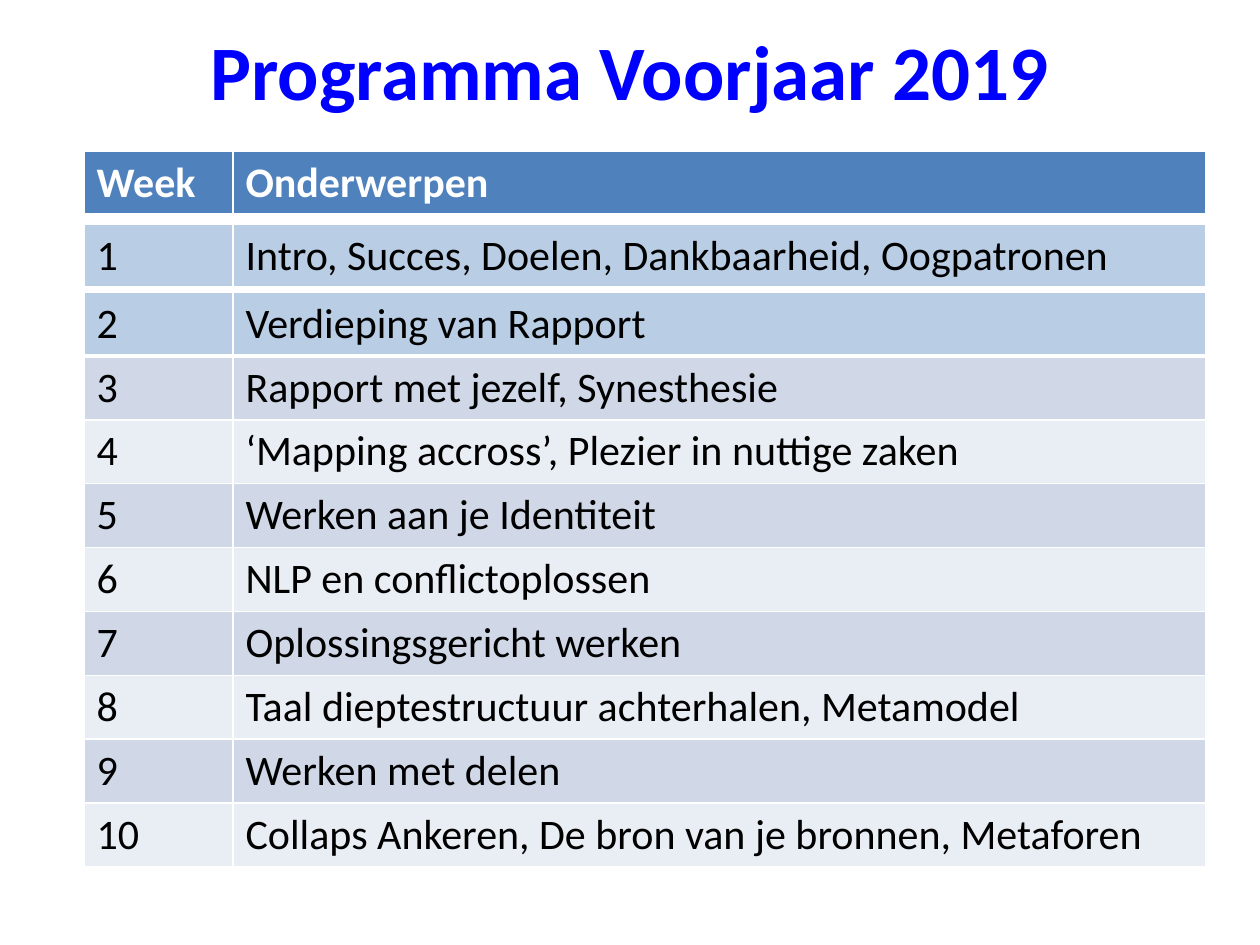
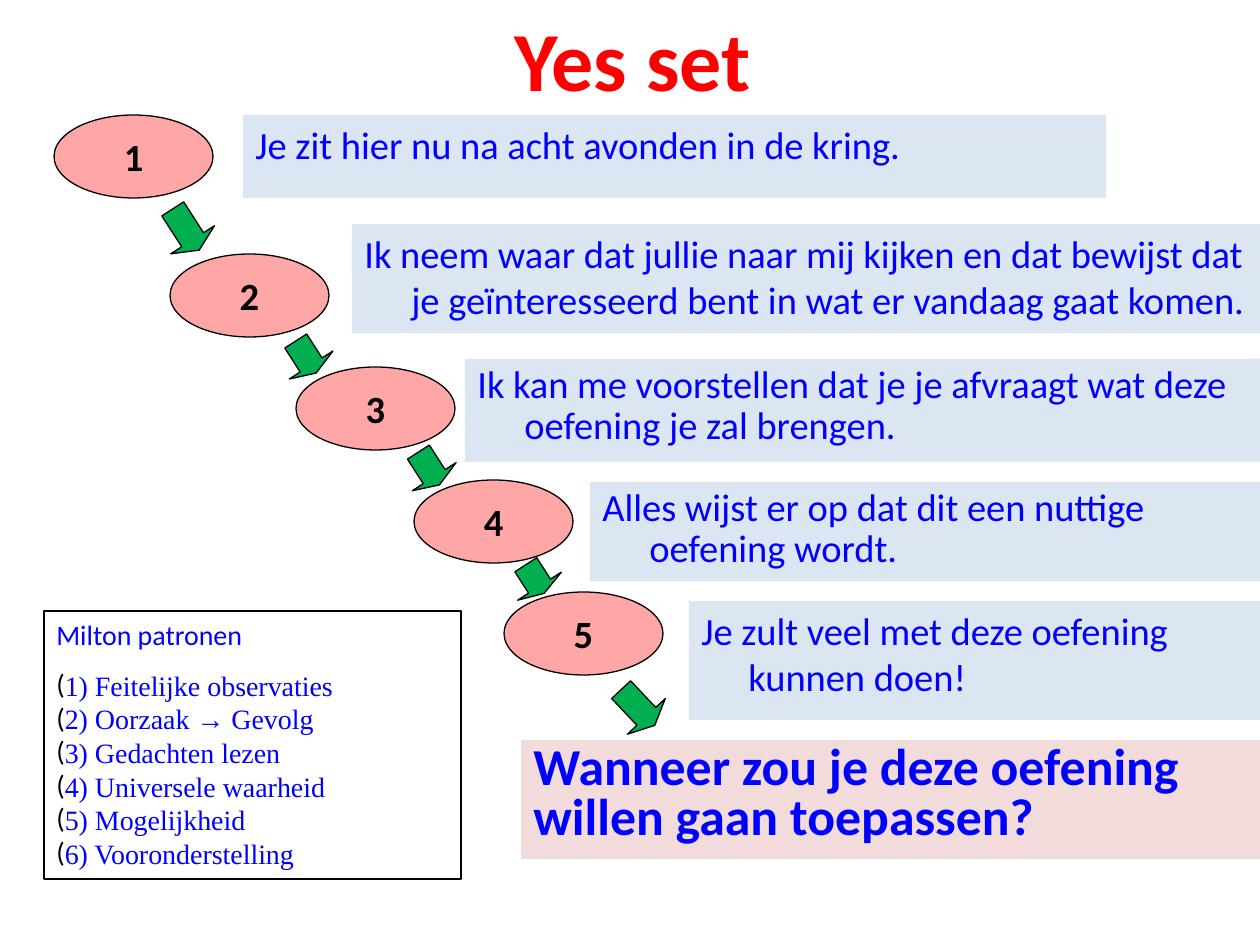
import pptx
import pptx.dml.color
import pptx.enum.shapes
import pptx.enum.text
import pptx.oxml
import pptx.oxml.ns
import pptx.util
import lxml.etree

KINDS = pptx.enum.shapes.MSO_SHAPE
ALIGN = pptx.enum.text.PP_ALIGN
ANCHOR = pptx.enum.text.MSO_ANCHOR
PT = pptx.util.Pt
PX = 914400 / 126  # EMU in one px
FONT = "Calibri"
BLUE, RED, BLACK, WHITE = "0000FF", "FF0000", "000000", "FFFFFF"
HEAD, FIRST, ODD, EVEN = "4F81BD", "B9CDE5", "D0D8E8", "E9EDF4"
PINK, GREEN, PALE, ROSE = "FFA7A7", "00B050", "DCE6F2", "F2DCDB"


def style(frame, size, color, bold=False, align=ALIGN.LEFT, anchor=ANCHOR.TOP):
    """Give all text in the frame one look."""
    frame.vertical_anchor = anchor
    for para in frame.paragraphs:
        para.alignment = align
        for run in para.runs:
            run.font.name = FONT
            run.font.size = PT(size)
            run.font.bold = bold
            run.font.color.rgb = pptx.dml.color.RGBColor.from_string(color)


def draw(slide, kind, box, fill, line=None):
    """Add a flat shape; box is left, top, width, height in px."""
    shape = slide.shapes.add_shape(kind, *[round(n * PX) for n in box])
    shape.shadow.inherit = False
    shape.fill.solid()
    shape.fill.fore_color.rgb = pptx.dml.color.RGBColor.from_string(fill)
    if line:
        shape.line.color.rgb = pptx.dml.color.RGBColor.from_string(line)
        shape.line.width = PT(0.75)
    else:
        shape.line.fill.background()
    shape.text_frame.word_wrap = True
    return shape


prs = pptx.Presentation()
prs.slide_width = round(1260 * PX)
prs.slide_height = round(945 * PX)

# Titles
slides = []
for text, box, size, color in [
    ("Programma Voorjaar 2019", (63, 6, 1134, 127), 44, BLUE),
    ("Yes set", (501, 0, 263, 115), 48, RED),
]:
    slide = prs.slides.add_slide(prs.slide_layouts[5])
    title = slide.shapes.title
    title.left, title.top, title.width, title.height = [round(n * PX) for n in box]
    title.text_frame.text = text
    title.text_frame.auto_size = pptx.enum.text.MSO_AUTO_SIZE.NONE
    style(title.text_frame, size, color, True, ALIGN.CENTER, ANCHOR.MIDDLE)
    slides.append(slide)
plan, steps = slides

# Programme: three stacked tables that share their columns
topics = [
    "Verdieping van Rapport",
    "Rapport met jezelf, Synesthesie",
    "‘Mapping accross’, Plezier in nuttige zaken",
    "Werken aan je Identiteit",
    "NLP en conflictoplossen",
    "Oplossingsgericht werken",
    "Taal dieptestructuur achterhalen, Metamodel",
    "Werken met delen",
    "Collaps Ankeren, De bron van je bronnen, Metaforen",
]
weeks = [(str(num), topic) for num, topic in enumerate(topics, 2)]
intro = "Intro, Succes, Doelen, Dankbaarheid, Oogpatronen"
for top, rows, fills in [
    (151, [("Week", "Onderwerpen")], [HEAD]),
    (224, [("1", intro)], [FIRST]),
    (292, weeks, [FIRST] + [ODD, EVEN] * 4),
]:
    box = (84, top, 1122, 63 * len(rows))
    frame = plan.shapes.add_table(len(rows), 2, *[round(n * PX) for n in box])
    table = frame.table
    for col, width in zip(table.columns, (149, 973)):
        col.width = round(width * PX)
    for i, (row, fill) in enumerate(zip(rows, fills)):
        for j, text in enumerate(row):
            cell = table.cell(i, j)
            cell.text = text
            head = fill == HEAD
            style(cell.text_frame, 24, WHITE if head else BLACK, head)
            props = cell._tc.get_or_add_tcPr()
            for side in ("lnL", "lnR", "lnT", "lnB"):
                thick = side == "lnB" and i == 0 or side == "lnT" and i == 1
                edge = lxml.etree.SubElement(
                    props, pptx.oxml.ns.qn("a:" + side), w=str(PT(3 if thick else 1))
                )
                paint = lxml.etree.SubElement(edge, pptx.oxml.ns.qn("a:solidFill"))
                lxml.etree.SubElement(paint, pptx.oxml.ns.qn("a:srgbClr"), val=WHITE)
            cell.fill.solid()
            cell.fill.fore_color.rgb = pptx.dml.color.RGBColor.from_string(fill)

# Staircase of numbered steps, each with its sentence
stairs = [
    ((54, 115), (243, 115, 863, 83), 1, "Je zit hier nu na acht avonden in de kring."),
    ((170, 254), (352, 224, 908, 109), 1,
     "Ik neem waar dat jullie naar mij kijken en dat bewijst dat "
     "je geïnteresseerd bent in wat er vandaag gaat komen."),
    ((296, 367), (465, 359, 795, 103), 0.9,
     "Ik kan me voorstellen dat je je afvraagt wat deze oefening je zal brengen."),
    ((414, 480), (590, 482, 670, 99), 0.9,
     "Alles wijst er op dat dit een nuttige oefening wordt."),
    ((504, 592), (689, 601, 571, 119), 1,
     "Je zult veel met deze oefening kunnen doen!"),
]
for num, (spot, box, space, text) in enumerate(stairs, 1):
    band = draw(steps, KINDS.RECTANGLE, box, PALE)
    band.text_frame.text = text
    style(band.text_frame, 22, BLUE)
    para = band.text_frame.paragraphs[0]
    para.line_spacing = space
    props = para._p.get_or_add_pPr()
    props.set("marL", str(round(47 * PX)))
    props.set("indent", str(round(-47 * PX)))
    disc = draw(steps, KINDS.OVAL, (*spot, 159, 83), PINK, BLACK)
    disc.text_frame.text = str(num)
    style(disc.text_frame, 22, BLACK, True, ALIGN.CENTER)

for left, top, height, turn in [
    (160, 205, 49, 327.3),
    (280, 338, 38, 327.3),
    (403, 449, 39, 327.3),
    (509, 562, 34, 327.3),
    (612, 683, 49, 316.7),
]:
    arrow = draw(steps, KINDS.DOWN_ARROW, (left, top, 52, height), GREEN, BLACK)
    arrow.adjustments[0] = 0.5
    arrow.adjustments[1] = 0.25
    arrow.rotation = turn

# Closing question
ask = draw(steps, KINDS.RECTANGLE, (521, 740, 739, 119), ROSE)
ask.text_frame.text = "Wanneer zou je deze oefening willen gaan toepassen?"
style(ask.text_frame, 29.6, BLUE, True)
ask.text_frame.paragraphs[0].line_spacing = 0.8

# Legend of patterns, with an opening bracket as bullet
key = draw(steps, KINDS.RECTANGLE, (44, 611, 417, 268), WHITE, BLACK)
key.text_frame.text = "\n".join([
    "Milton patronen",
    "1) Feitelijke observaties",
    "2) Oorzaak → Gevolg",
    "3) Gedachten lezen",
    "4) Universele waarheid",
    "5) Mogelijkheid",
    "6) Vooronderstelling",
])
style(key.text_frame, 16, BLUE)
first, *items = key.text_frame.paragraphs
first.space_after = PT(10)
for item in items:
    item.runs[0].font.name = "Times New Roman"
    props = item._p.get_or_add_pPr()
    tint = lxml.etree.SubElement(props, pptx.oxml.ns.qn("a:buClr"))
    lxml.etree.SubElement(tint, pptx.oxml.ns.qn("a:srgbClr"), val=BLACK)
    lxml.etree.SubElement(props, pptx.oxml.ns.qn("a:buFont"), typeface=FONT)
    lxml.etree.SubElement(props, pptx.oxml.ns.qn("a:buChar"), char="(")

prs.save("out.pptx")
